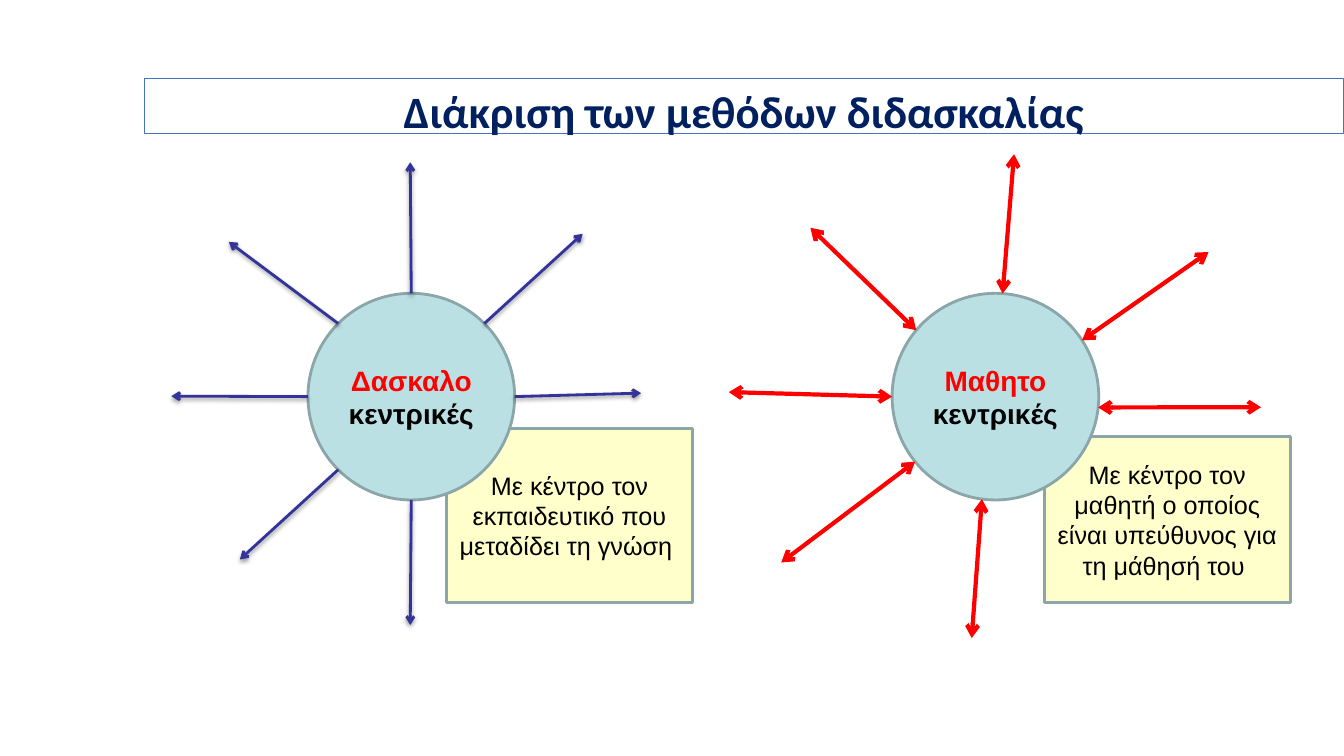
from dataclasses import dataclass
from math import cos, radians, sin

from lxml.etree import SubElement
from pptx import Presentation
from pptx.dml.color import RGBColor
from pptx.enum.shapes import MSO_CONNECTOR as Link, MSO_SHAPE as Form
from pptx.enum.text import MSO_ANCHOR as Anchor, MSO_AUTO_SIZE as Fit, PP_ALIGN as Align
from pptx.oxml.ns import qn
from pptx.shapes.autoshape import Shape
from pptx.slide import Slide
from pptx.text.text import _Paragraph as Para
from pptx.util import Emu, Inches, Pt

# Grid: square cells of a tenth of an inch
CELL = Inches(0.1)
COLS, ROWS = 133.33, 75
SIZE = 20.5  # circle diameter
HUES = {"navy": "002060", "frame": "4472C4", "note": "FFFFCC", "edge": "8AA6A8",
        "disc": "BBE0E3", "blue": "333399", "red": "FF0000", "black": "000000"}


@dataclass(frozen=True)
class Ray:
    angle: float  # degrees on the circle, clockwise from the right
    col: float
    row: float


@dataclass(frozen=True)
class Hub:
    col: float
    row: float
    word: str
    rays: tuple[Ray, ...]
    hue: str
    width: float
    double: bool
    shade: bool


@dataclass(frozen=True)
class Note:
    col: float
    row: float
    wide: float
    high: float
    text: str


NOTES = (
    Note(103.6, 43.3, 24.4, 16.5,
         "Με κέντρο τον μαθητή ο οποίος είναι υπεύθυνος για τη μάθησή του "),
    Note(44.3, 42.5, 24.4, 17.3,
         "Με κέντρο τον εκπαιδευτικό που μεταδίδει τη γνώση "),
)
HUBS = (
    Hub(40.8, 39.35, "Δασκαλο", (
        Ray(-45, 57.8, 23.2), Ray(-90, 40.7, 16.1), Ray(-135, 22.7, 24),
        Ray(0, 63.6, 39), Ray(180, 17, 39.3), Ray(135, 23.8, 55.5),
        Ray(90, 40.7, 62)), "blue", 2, False, True),
    Hub(98.75, 39.35, "Μαθητο", (
        Ray(-140, 80.4, 22.6), Ray(-86, 100.6, 15.3), Ray(-33, 119.9, 25),
        Ray(97.5, 96.4, 63.3), Ray(141, 77.5, 55.8), Ray(180, 72.3, 38.9),
        Ray(6, 125.1, 40.4)), "red", 3, True, False),
)


def span(cells: float) -> Emu:
    return Emu(round(cells * CELL))


def tint(name: str) -> RGBColor:
    return RGBColor.from_string(HUES[name])


def style(para: Para, size: float, hue: str, face: str = "Arial", bold: bool = False) -> None:
    para.alignment = Align.CENTER
    font = para.font
    font.name, font.size, font.bold = face, Pt(size), bold
    font.color.rgb = tint(hue)


def add_title(slide: Slide, text: str) -> None:
    title = slide.shapes.title
    title.left, title.top = span(14.3), span(7.8)
    title.width, title.height = span(119), span(5.4)
    title.line.color.rgb = tint("frame")
    title.line.width = Pt(0.75)
    frame = title.text_frame
    frame.text = text
    frame.auto_size = Fit.NONE
    frame.vertical_anchor = Anchor.TOP
    style(frame.paragraphs[0], 32, "navy", "Calibri", True)


def add_form(slide: Slide, form: Form, col: float, row: float,
             wide: float, high: float, fill: str) -> Shape:
    shape = slide.shapes.add_shape(form, span(col), span(row), span(wide), span(high))
    shape.shadow.inherit = False
    shape.fill.solid()
    shape.fill.fore_color.rgb = tint(fill)
    shape.line.color.rgb = tint("edge")
    shape.line.width = Pt(2)
    shape.text_frame.word_wrap = True
    shape.text_frame.vertical_anchor = Anchor.MIDDLE
    return shape


def add_note(slide: Slide, note: Note) -> None:
    box = add_form(slide, Form.RECTANGLE, note.col, note.row, note.wide, note.high, "note")
    box.text_frame.text = note.text
    style(box.text_frame.paragraphs[0], 18, "black")


def add_ray(slide: Slide, hub: Hub, ray: Ray) -> None:
    turn = radians(ray.angle)
    col = hub.col + SIZE / 2 * cos(turn)
    row = hub.row + SIZE / 2 * sin(turn)
    link = slide.shapes.add_connector(
        Link.STRAIGHT, span(col), span(row), span(ray.col), span(ray.row))
    link.line.color.rgb = tint(hub.hue)
    link.line.width = Pt(hub.width)

    # Arrowheads
    pen = link.line._get_or_add_ln()
    for end in ("a:headEnd", "a:tailEnd") if hub.double else ("a:tailEnd",):
        SubElement(pen, qn(end), type="arrow")

    # Soft shadow, or none
    effect = SubElement(link._element.spPr, qn("a:effectLst"))
    if hub.shade:
        cast = SubElement(effect, qn("a:outerShdw"), blurRad="40000", dist="20000",
                          dir="5400000", rotWithShape="0")
        color = SubElement(cast, qn("a:srgbClr"), val=HUES["black"])
        SubElement(color, qn("a:alpha"), val="38000")


def add_hub(slide: Slide, hub: Hub) -> None:
    disc = add_form(slide, Form.OVAL, hub.col - SIZE / 2, hub.row - SIZE / 2,
                    SIZE, SIZE, "disc")
    disc.text_frame.text = f"{hub.word}\nκεντρικές"
    for para, hue in zip(disc.text_frame.paragraphs, ("red", "black")):
        style(para, 20, hue, bold=True)
    for ray in hub.rays:
        add_ray(slide, hub, ray)


def main() -> None:
    deck = Presentation()
    deck.slide_width, deck.slide_height = span(COLS), span(ROWS)
    slide = deck.slides.add_slide(deck.slide_layouts[5])
    add_title(slide, "Διάκριση των μεθόδων διδασκαλίας")
    for note in NOTES:
        add_note(slide, note)
    for hub in HUBS:
        add_hub(slide, hub)
    deck.save("out.pptx")


if __name__ == "__main__":
    main()
